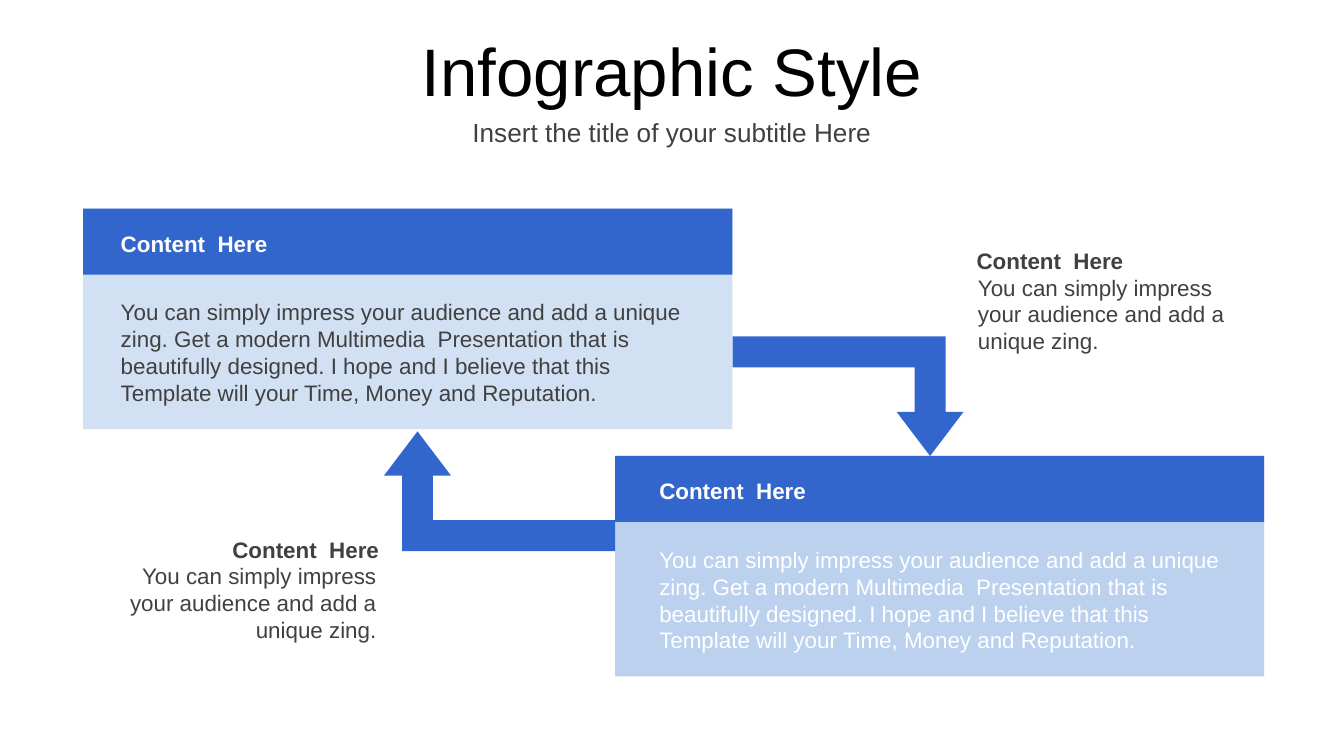
import pptx
import pptx.dml.color
import pptx.enum.shapes
import pptx.enum.text
import pptx.oxml
import pptx.util
from pptx.util import Pt

SHAPES = pptx.enum.shapes.MSO_SHAPE
ALIGN = pptx.enum.text.PP_ALIGN
ANCHOR = pptx.enum.text.MSO_ANCHOR

BLUE = "3366CC"
DARK = "404040"
WHITE = "FFFFFF"
CARD_WIDTH, CARD_HEIGHT, HEADER_HEIGHT = 347.8, 118.1, 35.3
ARROW_WIDTH, ARROW_HEIGHT = 123.8, 64.1

HEADING = "Content  Here"
CARD_TEXT = (
    "You can simply impress your audience and add a unique zing. "
    "Get a modern Multimedia  Presentation that is beautifully designed. "
    "I hope and I believe that this Template will your Time, Money and Reputation."
)
NOTE_TEXT = "You can simply impress your audience and add a unique zing."


def color(value):
    return pptx.dml.color.RGBColor.from_string(value)


def place(shape, left, top, width, height):
    shape.left, shape.top = Pt(left), Pt(top)
    shape.width, shape.height = Pt(width), Pt(height)


def write(shape, text, size, text_color, align=ALIGN.LEFT, bold=False, anchor=ANCHOR.TOP):
    frame = shape.text_frame
    frame.text = text
    frame.word_wrap = True
    frame.vertical_anchor = anchor
    para = frame.paragraphs[0]
    para.alignment = align
    font = para.runs[0].font
    font.name, font.size, font.bold = "Arial", Pt(size), bold
    font.color.rgb = color(text_color)


def add_text(page, left, top, width, height, text, size, text_color, **style):
    box = page.shapes.add_textbox(Pt(left), Pt(top), Pt(width), Pt(height))
    write(box, text, size, text_color, **style)


def add_filled(page, kind, left, top, width, height, fill, opacity=100):
    shape = page.shapes.add_shape(kind, Pt(left), Pt(top), Pt(width), Pt(height))
    shape.shadow.inherit = False
    shape.line.fill.background()
    shape.fill.solid()
    shape.fill.fore_color.rgb = color(fill)
    if opacity < 100:
        tint = shape._element.spPr.find(".//" + pptx.oxml.ns.qn("a:srgbClr"))
        alpha = pptx.oxml.parse_xml(
            f'<a:alpha {pptx.oxml.ns.nsdecls("a")} val="{opacity * 1000}"/>')
        tint.append(alpha)
    return shape


def add_card(page, left, top, indent, tint, text_color):
    add_filled(page, SHAPES.RECTANGLE, left, top, CARD_WIDTH, CARD_HEIGHT, tint, 40)
    add_filled(page, SHAPES.RECTANGLE, left, top, CARD_WIDTH, HEADER_HEIGHT, BLUE)
    text_left = left + indent
    add_text(page, text_left, top + 7.7, 323.3, 21.8, HEADING, 12, WHITE, bold=True)
    add_text(page, text_left, top + 44.6, 323.3, 65.4, CARD_TEXT, 12, text_color)


def add_bent_arrow(page, left, top, rotation=0):
    arrow = add_filled(page, SHAPES.BENT_UP_ARROW, left, top, ARROW_WIDTH, ARROW_HEIGHT, BLUE)
    for index, value in enumerate((0.258, 0.28, 0.37)):
        arrow.adjustments[index] = value
    arrow.rotation = rotation
    arrow._element.spPr.get_or_add_xfrm().set("flipH", "1")


def add_note(page, left, top, align):
    add_text(page, left + 0.7, top + 14.1, 164.9, 51, NOTE_TEXT, 12, DARK, align=align)
    add_text(page, left, top, 167, 21.8, HEADING, 12, DARK, align=align, bold=True)


def main():
    deck = pptx.Presentation()
    deck.slide_width, deck.slide_height = Pt(720), Pt(405)
    page = deck.slides.add_slide(deck.slide_layouts[5])

    # Title and subtitle
    title = page.shapes.title
    place(title, 0, 14.4, 720, 45.4)
    write(title, "Infographic Style", 36, "000000", align=ALIGN.CENTER, anchor=ANCHOR.MIDDLE)
    add_text(page, 0, 59.8, 720, 22.3, "Insert the title of your subtitle Here", 14, DARK,
             align=ALIGN.CENTER, anchor=ANCHOR.MIDDLE)

    # Two cards
    upper_left, upper_top = 44.6, 111.8
    lower_left, lower_top = 329.5, 244.3
    add_card(page, upper_left, upper_top, 13, "8EB4E3", DARK)
    add_card(page, lower_left, lower_top, 16.6, "558ED5", WHITE)

    # Arrows that lead from each card to the other
    add_bent_arrow(page, lower_left - ARROW_WIDTH, 231.1)
    add_bent_arrow(page, upper_left + CARD_WIDTH, lower_top - ARROW_HEIGHT, rotation=180)

    # Notes beside the arrows
    add_note(page, 516.1, 129, ALIGN.LEFT)
    add_note(page, 43.2, 283.6, ALIGN.RIGHT)

    deck.save("out.pptx")


if __name__ == "__main__":
    main()
